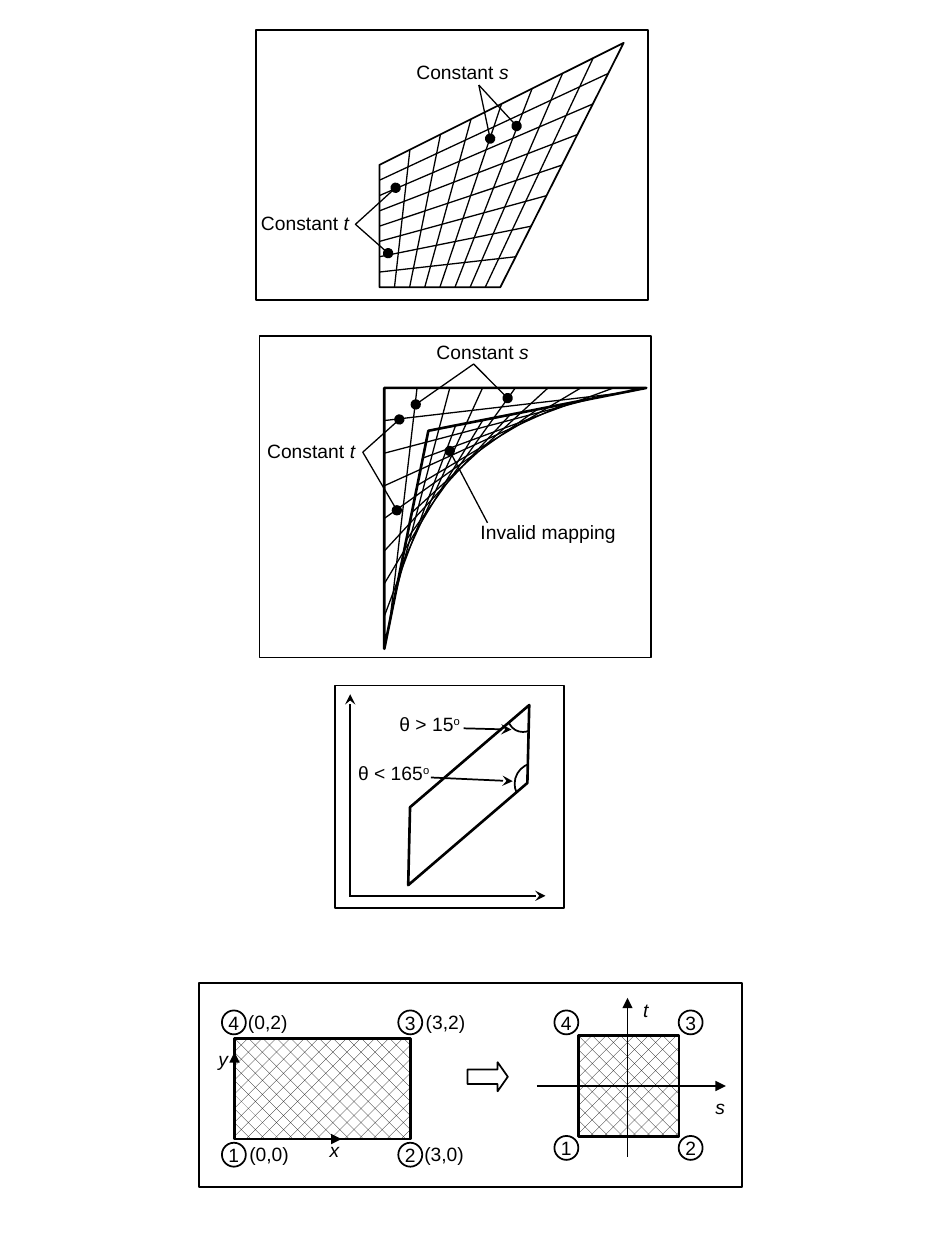
from lxml.etree import SubElement
from pptx import Presentation
from pptx.dml.color import RGBColor
from pptx.enum.dml import MSO_PATTERN
from pptx.enum.shapes import MSO_CONNECTOR, MSO_SHAPE
from pptx.enum.text import MSO_ANCHOR, PP_ALIGN
from pptx.oxml.ns import qn
from pptx.util import Pt

BLACK = RGBColor(0, 0, 0)
WHITE = RGBColor(255, 255, 255)
FONT, SIZE = "Arial", 11
THIN, MID, THICK = 0.75, 1, 1.5
STEPS = 8  # cells along each side of a mesh


class Panel:
    """A framed region; all positions are points from its top left corner."""

    def __init__(self, slide, left, top, wide, high):
        self.shapes = slide.shapes
        self.left, self.top = left, top
        self.wide, self.high = wide, high

    def spot(self, x, y):
        return Pt(self.left + x), Pt(self.top + y)

    def shape(self, kind, x, y, wide, high, width=MID, fill=None, adj=()):
        item = self.shapes.add_shape(kind, *self.spot(x, y), Pt(wide), Pt(high))
        for i, value in enumerate(adj):
            item.adjustments[i] = value
        return paint(item, width, fill)

    def frame(self):
        self.shape(MSO_SHAPE.RECTANGLE, 0, 0, self.wide, self.high)

    def line(self, start, end, width=THIN, tail=None):
        item = self.shapes.add_connector(
            MSO_CONNECTOR.STRAIGHT, *self.spot(*start), *self.spot(*end))
        item.line.color.rgb = BLACK
        item.line.width = Pt(width)
        add_ends(item, tail=tail)
        SubElement(item._element.spPr, qn("a:effectLst"))

    def poly(self, points, width=THIN, close=False, ends=None):
        spots = [self.spot(*p) for p in points]
        pen = self.shapes.build_freeform(*spots[0])
        pen.add_line_segments(spots[1:], close=close)
        add_ends(paint(pen.convert_to_shape(), width), ends, ends)

    def label(self, x, y, wide, *runs, high=14.4):
        box = self.shapes.add_textbox(*self.spot(x, y), Pt(wide), Pt(high))
        write(box.text_frame, runs)

    def node(self, x, y, text):
        item = self.shape(MSO_SHAPE.OVAL, x, y, 13.7, 13.7)
        item.text_frame.vertical_anchor = MSO_ANCHOR.MIDDLE
        write(item.text_frame, [(text, "")])

    def mesh(self, a, b, c, d, width):
        """Outline a, b, c, d and join equal steps on facing sides."""
        self.poly([d, a, b, c], width, close=True)
        for k in range(1, STEPS):
            part = k / STEPS
            self.line(blend(a, d, part), blend(b, c, part))
            self.line(blend(d, c, part), blend(a, b, part))

    def arc(self, x, y, radius, start, end):
        # Angles are stored in 60000ths of a degree, scaled by 100000
        self.shape(MSO_SHAPE.ARC, x - radius, y - radius, 2 * radius,
                   2 * radius, adj=(start * 0.6, end * 0.6))


def blend(p, q, part):
    return tuple(u + (v - u) * part for u, v in zip(p, q))


def paint(item, width, fill=None):
    item.shadow.inherit = False
    item.line.color.rgb = BLACK
    item.line.width = Pt(width)
    if fill is None:
        item.fill.background()
    elif fill == "hatch":
        item.fill.patterned()
        item.fill.pattern = MSO_PATTERN.PERCENT_25
        item.fill.fore_color.rgb = BLACK
        item.fill.back_color.rgb = WHITE
    else:
        item.fill.solid()
        item.fill.fore_color.rgb = fill
    return item


def add_ends(item, head=None, tail=None):
    ln = item._element.spPr.find(qn("a:ln"))
    for tag, kind in (("a:headEnd", head), ("a:tailEnd", tail)):
        if kind:
            SubElement(ln, qn(tag), type=kind)


def write(frame, runs):
    """Each run is (text, style); style is "", "italic" or "super"."""
    frame.word_wrap = False
    frame.margin_left = frame.margin_right = 0
    frame.margin_top = frame.margin_bottom = 0
    para = frame.paragraphs[0]
    para.alignment = PP_ALIGN.CENTER
    for text, style in runs:
        run = para.add_run()
        run.text = text
        run.font.name, run.font.size = FONT, Pt(SIZE)
        run.font.color.rgb = BLACK
        if style == "italic":
            run.font.italic = True
        elif style == "super":
            run.font._element.set("baseline", "30000")


def draw_valid(slide, *box):
    pan = Panel(slide, *box)
    pan.mesh((70.6, 77), (210.2, 7.2), (139.7, 146.9), (70.6, 146.9), MID)
    # Labels and leaders
    pan.label(-5, 103.7, 66.2, ("Constant ", ""), ("t", "italic"))
    pan.label(85, 17.3, 66.2, ("Constant ", ""), ("s", "italic"))
    for end in ((149, 54.7), (133.9, 61.9)):
        pan.line((127.4, 31.3), end, tail="oval")
    pan.poly([(79.9, 90), (56.9, 110.9), (75.6, 127.4)], ends="oval")
    pan.frame()


def draw_invalid(slide, *box):
    pan = Panel(slide, *box)
    pan.mesh((71.3, 29.5), (221, 29.5), (96.5, 54), (71.3, 178.6), THICK)
    # Labels and leaders
    pan.label(-2.2, 59, 63.4, ("Constant ", ""), ("t", "italic"))
    pan.poly([(79.9, 47.5), (59, 66.2), (78.5, 99.4)], ends="oval")
    pan.label(95.8, 2.2, 63.4, ("Constant ", ""), ("s", "italic"))
    pan.poly([(89.3, 38.9), (122.4, 15.8), (141.8, 35.3)], ends="oval")
    pan.label(122.4, 105.1, 85, ("Invalid mapping", ""))
    pan.line((130.3, 106.6), (108.7, 65.5), tail="oval")
    pan.frame()


def draw_angles(slide, *box):
    pan = Panel(slide, *box)
    skew = pan.shape(MSO_SHAPE.PARALLELOGRAM, 16.6, 46.1, 119.5, 33.1,
                     THICK, WHITE, (0.9,))
    skew.rotation = 319.4
    # Corner angles and their limits
    pan.arc(107.3, 18, 8.6, 65, 160)
    pan.arc(114.5, 56.2, 11.9, 155, 248)
    pan.label(35.3, 15.1, 37.4, ("θ > 15", ""), ("o", "super"), high=15.8)
    pan.label(11.5, 43.2, 43.9, ("θ < 165", ""), ("o", "super"), high=15.8)
    # Pointers, then axes
    for start, end in (((73.4, 24.5), (100.8, 25.2)),
                       ((54.7, 52.6), (101.5, 54.7)),
                       ((8, 120.2), (120.2, 120.2)),
                       ((8.6, 120.2), (8.6, 5))):
        pan.line(start, end, MID, "stealth")
    pan.frame()


def draw_mapping(slide, *box):
    pan = Panel(slide, *box)
    # Physical element
    pan.shape(MSO_SHAPE.RECTANGLE, 20.2, 31.7, 100.8, 57.6, THICK, "hatch")
    pan.line((51.1, 89.3), (81.4, 89.3), tail="triangle")
    pan.line((20.2, 58.3), (20.2, 39.6), tail="triangle")
    # Parent element
    pan.shape(MSO_SHAPE.RECTANGLE, 216.7, 30.2, 57.6, 57.6, THICK, "hatch")
    pan.line((193, 59), (301, 59), MID, "triangle")
    pan.line((244.8, 99.4), (244.8, 8.6), MID, "triangle")
    # Axis names and corner coordinates
    for x, y, name in ((69.8, 88.6, "x"), (6.2, 36.7, "y"),
                       (290.2, 64.1, "s"), (247.7, 8.6, "t")):
        pan.label(x, y, 15.1, (name, "italic"))
    for x, y, text in ((23.8, 91.4, "(0,0)"), (123.8, 91.4, "(3,0)"),
                       (124.6, 15.8, "(3,2)"), (23, 15.8, "(0,2)")):
        pan.label(x, y, 32.4, (text, ""))
    pan.shape(MSO_SHAPE.RIGHT_ARROW, 153.4, 45.4, 23, 16.6, MID, WHITE,
              (0.5, 0.35))
    # Corner numbers, anticlockwise from bottom left
    for west, east, north, south in ((13, 113.8, 15.8, 91.4),
                                     (203, 274, 15.8, 87.5)):
        ring = (west, south), (east, south), (east, north), (west, north)
        for i, (x, y) in enumerate(ring, 1):
            pan.node(x, y, str(i))
    pan.frame()


def main():
    deck = Presentation()
    deck.slide_width, deck.slide_height = Pt(540), Pt(720)
    slide = deck.slides.add_slide(deck.slide_layouts[6])
    draw_valid(slide, 146.2, 17.3, 223.9, 154.1)
    draw_invalid(slide, 148.3, 192.2, 223.9, 183.6)
    draw_angles(slide, 191.5, 391.7, 131, 127.4)
    draw_mapping(slide, 113.8, 561.6, 310.3, 116.6)
    deck.save("out.pptx")


if __name__ == "__main__":
    main()
